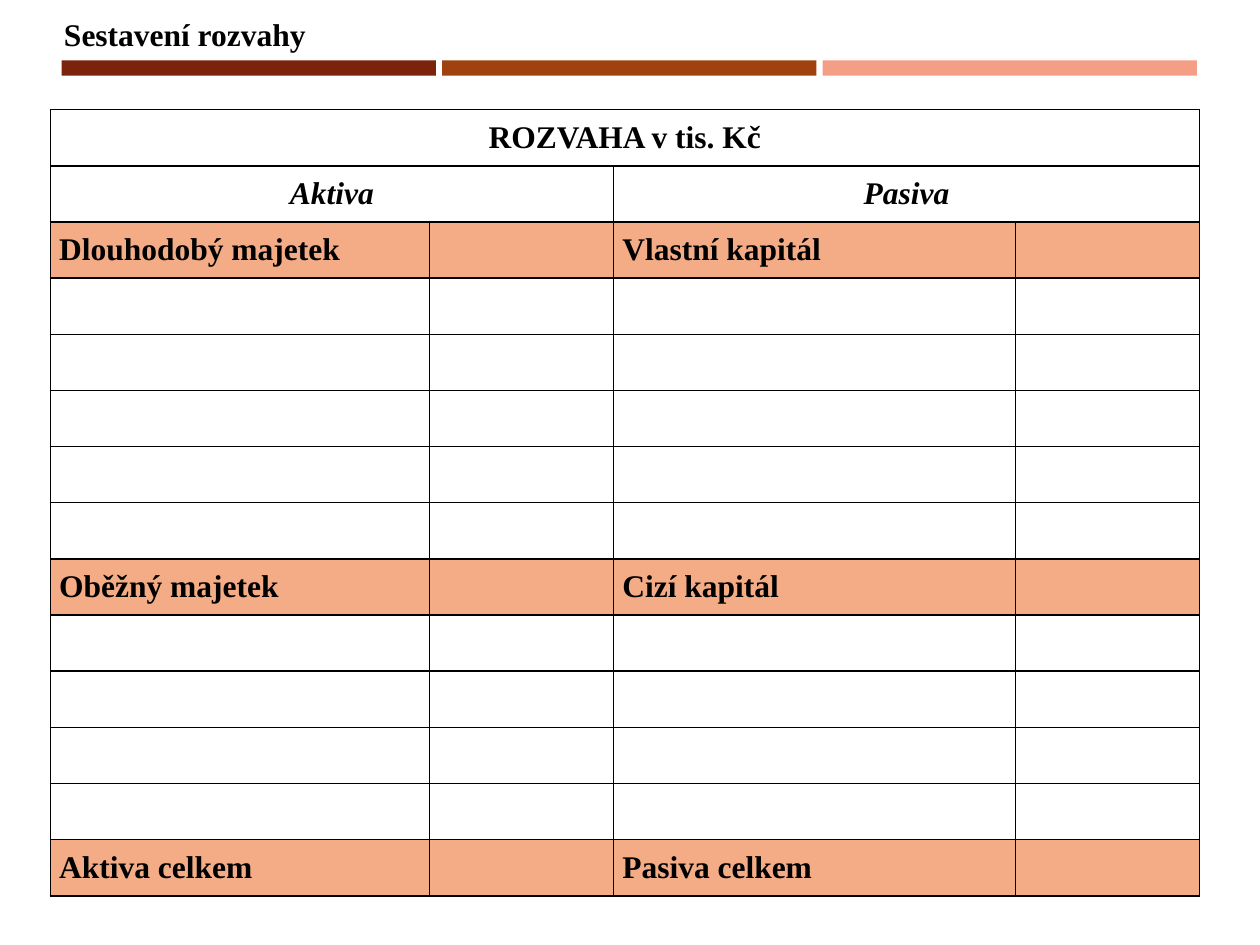
from lxml import etree
from pptx import Presentation
from pptx.dml.color import RGBColor
from pptx.enum import shapes, text
from pptx.oxml import ns
from pptx.util import Inches, Pt

FONT = "Times New Roman"
BLACK = "000000"
SECTION_FILL = "F3AC85"
TITLE = "Sestavení rozvahy"
BAR_COLORS = ["7B230B", "9F4210", "F49E86"]

COLUMN_WIDTHS = [3.01, 1.46, 3.19, 1.46]
ROW_COUNT = 14
TABLE_HEIGHT = 6.24
TABLE_TITLE = "ROZVAHA v tis. Kč"
SIDES = ["Aktiva", "Pasiva"]
SECTIONS = {
    2: ["Dlouhodobý majetek", "Vlastní kapitál"],
    8: ["Oběžný majetek", "Cizí kapitál"],
    13: ["Aktiva celkem", "Pasiva celkem"],
}


def color(value):
    return RGBColor.from_string(value)


def style_paragraph(paragraph, italic=False):
    paragraph.font.name = FONT
    paragraph.font.size = Pt(18)
    paragraph.font.bold = True
    paragraph.font.italic = italic
    paragraph.font.color.rgb = color(BLACK)


def write_cell(cell, words, centered=False, italic=False):
    cell.text = words
    paragraph = cell.text_frame.paragraphs[0]
    style_paragraph(paragraph, italic)
    paragraph.alignment = text.PP_ALIGN.CENTER if centered else text.PP_ALIGN.LEFT


def format_cell(cell, fill):
    """Set margins, anchor, a thin border on all sides, and the fill."""
    cell.margin_left = cell.margin_right = Inches(0.07)
    cell.margin_top = cell.margin_bottom = 0
    cell.vertical_anchor = text.MSO_ANCHOR.MIDDLE
    properties = cell._tc.get_or_add_tcPr()
    for side in ("lnL", "lnR", "lnT", "lnB"):
        line = etree.SubElement(properties, ns.qn(f"a:{side}"), w=str(Pt(1)))
        solid = etree.SubElement(line, ns.qn("a:solidFill"))
        etree.SubElement(solid, ns.qn("a:srgbClr"), val=BLACK)
    if fill:
        cell.fill.solid()
        cell.fill.fore_color.rgb = color(fill)
    else:
        cell.fill.background()


def add_bars(slide):
    for index, fill in enumerate(BAR_COLORS):
        bar = slide.shapes.add_shape(
            shapes.MSO_SHAPE.RECTANGLE, Inches(0.49 + index * 3.02),
            Inches(0.48), Inches(2.97), Inches(0.12))
        bar.shadow.inherit = False
        bar.fill.solid()
        bar.fill.fore_color.rgb = color(fill)
        bar.line.fill.background()


def add_title(slide):
    box = slide.shapes.add_textbox(Inches(0.41), Inches(0.07), Inches(2.14), Inches(0.4))
    frame = box.text_frame
    frame.word_wrap = False
    frame.auto_size = text.MSO_AUTO_SIZE.SHAPE_TO_FIT_TEXT
    frame.text = TITLE
    style_paragraph(frame.paragraphs[0])


def add_balance_sheet(slide):
    table = slide.shapes.add_table(
        ROW_COUNT, len(COLUMN_WIDTHS), Inches(0.4), Inches(0.87),
        Inches(sum(COLUMN_WIDTHS)), Inches(TABLE_HEIGHT)).table
    table.first_row = table.horz_banding = False
    for column, width in zip(table.columns, COLUMN_WIDTHS):
        column.width = Inches(width)
    for index, row in enumerate(table.rows):
        for cell in row.cells:
            format_cell(cell, SECTION_FILL if index in SECTIONS else None)

    table.cell(0, 0).merge(table.cell(0, 3))
    write_cell(table.cell(0, 0), TABLE_TITLE, centered=True)
    for side, name in enumerate(SIDES):
        left = 2 * side
        table.cell(1, left).merge(table.cell(1, left + 1))
        write_cell(table.cell(1, left), name, centered=True, italic=True)
        for row, names in SECTIONS.items():
            write_cell(table.cell(row, left), names[side])


def main():
    presentation = Presentation()
    presentation.slide_width = Inches(10)
    presentation.slide_height = Inches(7.5)
    slide = presentation.slides.add_slide(presentation.slide_layouts[6])
    add_bars(slide)
    add_balance_sheet(slide)
    add_title(slide)
    presentation.save("out.pptx")


if __name__ == "__main__":
    main()
